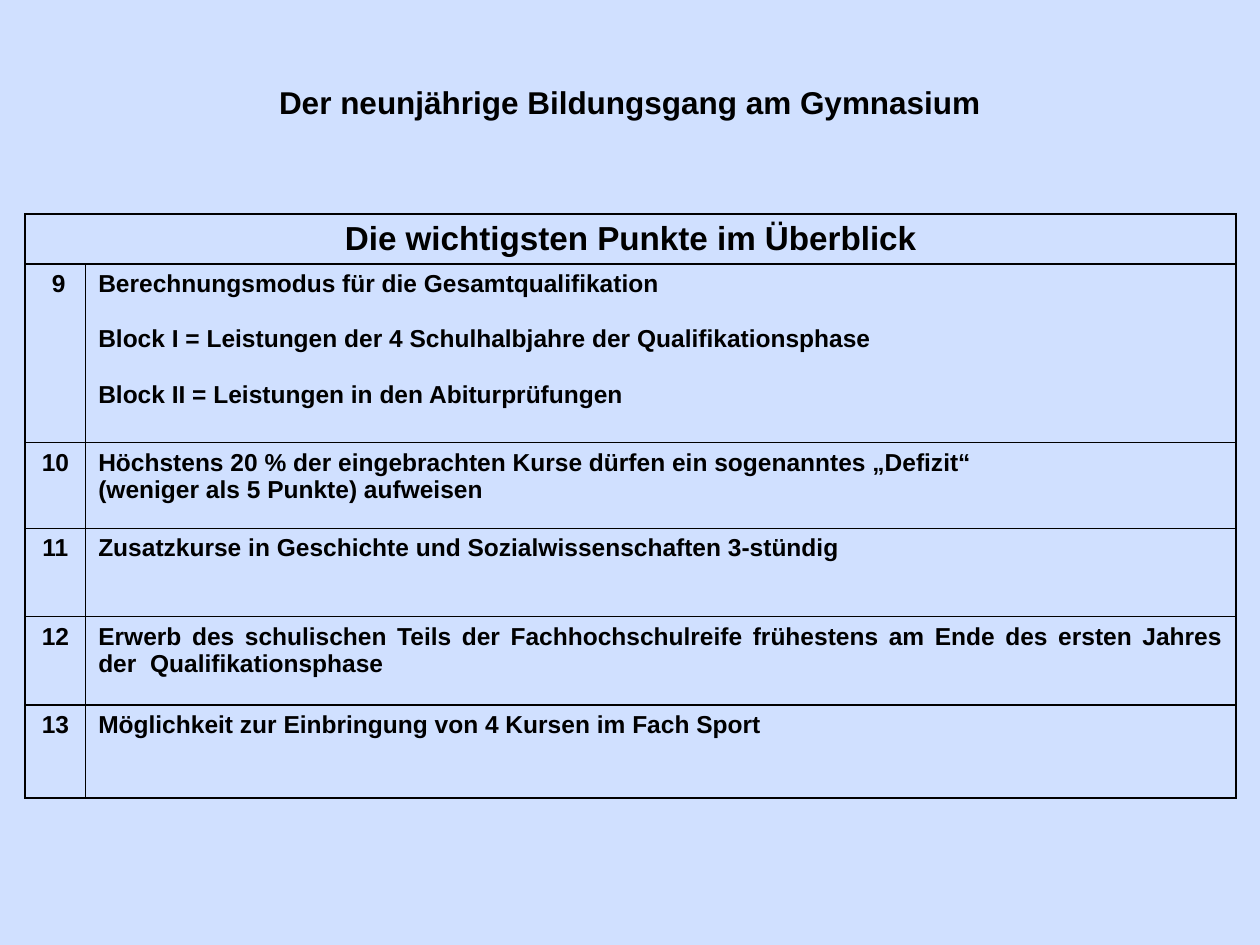
from lxml import etree
from pptx import Presentation
from pptx.dml import color
from pptx.enum import shapes, text
from pptx.oxml import ns
from pptx.util import Inches, Pt

BLACK = "000000"
TITLE = "Der neunjährige Bildungsgang am Gymnasium"
HEADING = "Die wichtigsten Punkte im Überblick"
POINTS = [
    (" 9", ["Berechnungsmodus für die Gesamtqualifikation",
            "Block I = Leistungen der 4 Schulhalbjahre der Qualifikationsphase",
            "Block II = Leistungen in den Abiturprüfungen"], 16),
    ("10", ["Höchstens 20 % der eingebrachten Kurse dürfen ein sogenanntes „Defizit“",
            "(weniger als 5 Punkte) aufweisen"], 0),
    ("11", ["Zusatzkurse in Geschichte und Sozialwissenschaften 3-stündig"], 0),
    ("12", ["Erwerb des schulischen Teils der Fachhochschulreife frühestens am Ende "
            "des ersten Jahres der  Qualifikationsphase"], 0),
    ("13", ["Möglichkeit zur Einbringung von 4 Kursen im Fach Sport"], 0),
]
COLUMN_WIDTHS = [0.48, 9.13]
ROW_HEIGHTS = [0.39, 1.42, 0.68, 0.7, 0.7, 0.74]


def rgb(value):
    """Turn a hex string into a colour."""
    return color.RGBColor.from_string(value)


def write(frame, lines, size, align, gap=0):
    """Fill a text frame with bold black paragraphs, gap points apart."""
    for index, line in enumerate(lines):
        para = frame.add_paragraph() if index else frame.paragraphs[0]
        para.text = line
        para.alignment = align
        if index and gap:
            para.space_before = Pt(gap)
        para.font.name = "Arial"
        para.font.size = Pt(size)
        para.font.bold = True
        para.font.color.rgb = rgb(BLACK)


def add_borders(cell, width=1):
    """Draw a solid line on all four sides of a cell."""
    properties = cell._tc.get_or_add_tcPr()
    for side in ("a:lnL", "a:lnR", "a:lnT", "a:lnB"):
        line = etree.SubElement(properties, ns.qn(side), w=str(Pt(width)))
        fill = etree.SubElement(line, ns.qn("a:solidFill"))
        etree.SubElement(fill, ns.qn("a:srgbClr"), val=BLACK)


def add_title_panel(page, left, top, width, height):
    """Cover the box with a translucent panel that carries the title."""
    panel = page.shapes.add_shape(shapes.MSO_SHAPE.RECTANGLE, left, top, width, height)
    panel.shadow.inherit = False
    panel.line.fill.background()
    panel.fill.solid()
    panel.fill.fore_color.rgb = rgb("6699FF")
    tint = panel._element.spPr.find(".//" + ns.qn("a:srgbClr"))
    etree.SubElement(tint, ns.qn("a:alpha"), val="30000")
    frame = panel.text_frame
    frame.vertical_anchor = text.MSO_ANCHOR.TOP
    frame.margin_top = Inches(0.66)
    write(frame, [TITLE], 18, text.PP_ALIGN.CENTER)


def add_points_table(page, left, top):
    """Place the table of numbered points under a heading row."""
    frame = page.shapes.add_table(
        len(ROW_HEIGHTS), len(COLUMN_WIDTHS), left, top,
        Inches(sum(COLUMN_WIDTHS)), Inches(sum(ROW_HEIGHTS)))
    table = frame.table
    table.first_row = False
    table.horz_banding = False
    for column, width in zip(table.columns, COLUMN_WIDTHS):
        column.width = Inches(width)
    for row, height in zip(table.rows, ROW_HEIGHTS):
        row.height = Inches(height)
    for cell in table.iter_cells():
        add_borders(cell)
        cell.fill.background()
    heading = table.cell(0, 0)
    heading.merge(table.cell(0, 1))
    write(heading.text_frame, [HEADING], 19, text.PP_ALIGN.CENTER)
    for row, (number, lines, gap) in enumerate(POINTS, start=1):
        write(table.cell(row, 0).text_frame, [number], 14, text.PP_ALIGN.CENTER)
        write(table.cell(row, 1).text_frame, lines, 14, text.PP_ALIGN.JUSTIFY, gap)


def main():
    """Build the slide and save the deck."""
    deck = Presentation()
    deck.slide_width, deck.slide_height = Inches(10), Inches(7.5)
    page = deck.slides.add_slide(deck.slide_layouts[6])
    add_title_panel(page, 0, 0, deck.slide_width, deck.slide_height)
    add_points_table(page, Inches(0.2), Inches(1.7))
    deck.save("out.pptx")


if __name__ == "__main__":
    main()
